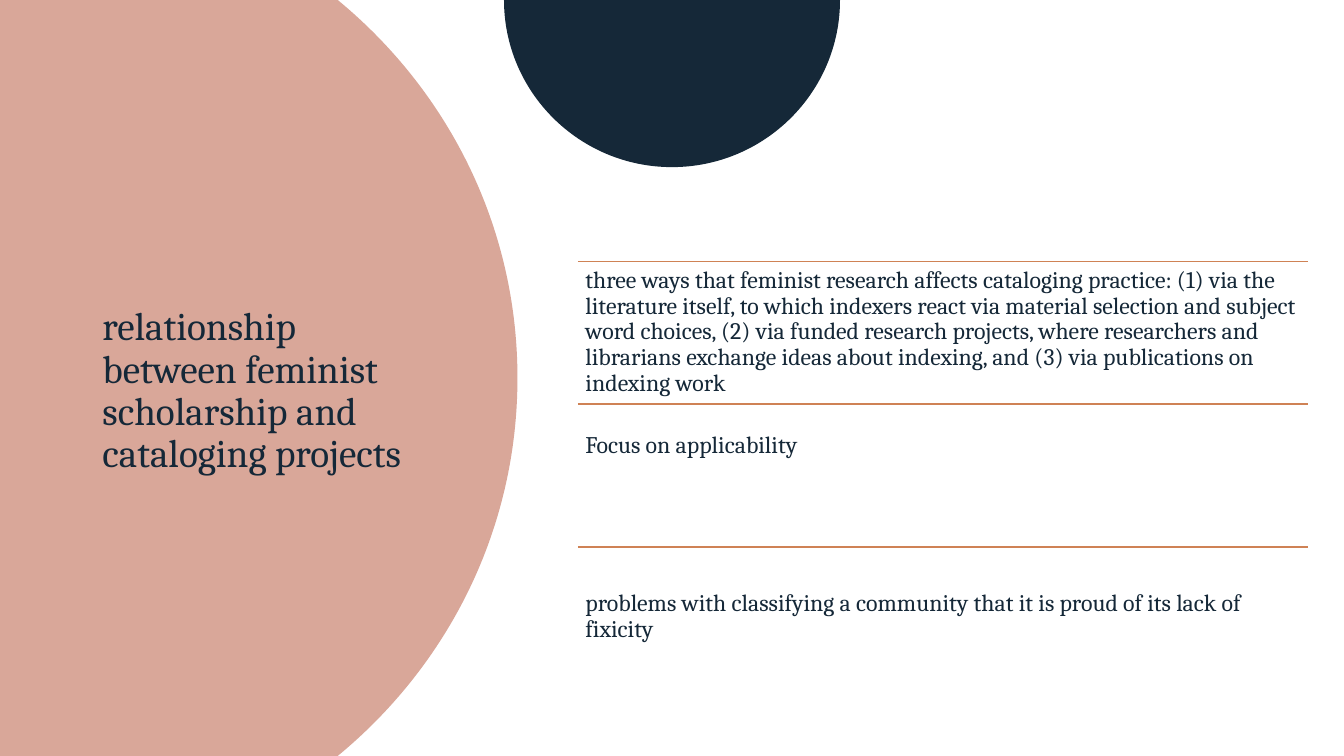
from dataclasses import dataclass

from lxml.etree import SubElement as sub
from pptx import Presentation
from pptx.dml.color import RGBColor as Color
from pptx.enum.shapes import MSO_CONNECTOR as Link
from pptx.enum.text import MSO_ANCHOR as Anchor, MSO_AUTO_SIZE as Fit, PP_ALIGN as Align
from pptx.oxml.ns import qn
from pptx.util import Pt

PX = 7620
WIDE, HIGH = 1600, 900
LEFT, TOP, SPAN, STEP = 688, 311, 869, 170

TITLE = "relationship between feminist scholarship and cataloging projects"
ROWS = [
    (0, 8, "three ways that feminist research affects cataloging practice: "
           "(1) via the literature itself, to which indexers react via material "
           "selection and subject word choices, (2) via funded research projects, "
           "where researchers and librarians exchange ideas about indexing, "
           "and (3) via publications on indexing work"),
    (26, 8, "Focus on applicability"),
    (0, 53, "problems with classifying a community that it is proud of its "
            "lack of fixicity"),
]
DISC = [(-2, 0), (402, 0),
        ((533, 108), (616, 269), (616, 450)),
        ((616, 631), (533, 792), (402, 900)),
        (-2, 900)]
BOWL = [(600, 0), (1000, 0),
        ((1000, 110), (910, 199), (800, 199)),
        ((690, 199), (600, 110), (600, 0))]


@dataclass(frozen=True)
class Theme:
    """Colours, font and type sizes of the slide."""
    rose: str = "D9A799"
    navy: str = "152838"
    rust: str = "CF8255"
    font: str = "Cambria"
    head: int = 28
    body: int = 17


LOOK = Theme()


def tint(name):
    """Turn a hex string into a colour."""
    return Color.from_string(name)


def place(shape, x, y, w, h):
    """Set the box of a shape in px."""
    shape.left, shape.top = x * PX, y * PX
    shape.width, shape.height = w * PX, h * PX


def write(shape, text, size=LOOK.body, color=LOOK.navy, anchor=Anchor.TOP,
          pad=(9, 8, 9, 8)):
    """Fill a shape with one formatted paragraph; pad is left, top, right, bottom."""
    frame = shape.text_frame
    frame.word_wrap = True
    frame.auto_size = Fit.NONE
    frame.vertical_anchor = anchor
    frame.margin_left, frame.margin_top, frame.margin_right, frame.margin_bottom = (
        side * PX for side in pad)
    para = frame.paragraphs[0]
    para.alignment = Align.LEFT
    para.line_spacing = 0.9
    para.space_before = Pt(0)
    run = para.add_run()
    run.text = text
    run.font.name = LOOK.font
    run.font.size = Pt(size)
    run.font.color.rgb = tint(color)


def add_curve(slide, steps, color):
    """Draw a filled outline; a step is a point, or two handles and a point."""
    bent = [isinstance(step[0], tuple) for step in steps]
    dots = [step[-1] if bend else step for step, bend in zip(steps, bent)]
    pen = slide.shapes.build_freeform(*dots[0], scale=PX)
    pen.add_line_segments(dots[1:], close=True)
    shape = pen.convert_to_shape()
    shape.shadow.inherit = False
    shape.fill.solid()
    shape.fill.fore_color.rgb = tint(color)
    shape.line.fill.background()
    x0, y0 = (min(axis) for axis in zip(*dots))
    parts = list(shape.element.iter(qn("a:lnTo")))
    for part, step, bend in zip(parts, steps[1:], bent[1:]):
        if bend:
            curve = part.makeelement(qn("a:cubicBezTo"), {})
            for x, y in step:
                sub(curve, qn("a:pt"), x=str(x - x0), y=str(y - y0))
            part.getparent().replace(part, curve)


def add_rule(slide, y):
    """Draw one thin line across the list."""
    rule = slide.shapes.add_connector(
        Link.STRAIGHT, LEFT * PX, y * PX, (LEFT + SPAN) * PX, y * PX)
    rule.line.color.rgb = tint(LOOK.rust)
    rule.line.width = Pt(1)
    sub(rule.element.spPr, qn("a:effectLst"))


def add_row(slide, y, drop, inset, text):
    """Add a rule and the text that hangs below it."""
    add_rule(slide, y)
    box = slide.shapes.add_textbox(0, 0, 0, 0)
    place(box, LEFT, y + drop, SPAN, STEP)
    write(box, text, pad=(9, inset, 9, 8))


def add_title(slide, text):
    """Format the title and bring it in front of the circles."""
    title = slide.shapes.title
    place(title, 110, 238, 398, 512)
    write(title, text, size=LOOK.head, anchor=Anchor.MIDDLE, pad=(12, 6, 12, 62))
    title.element.getparent().append(title.element)


def main():
    """Build the slide and save it."""
    deck = Presentation()
    deck.slide_width, deck.slide_height = WIDE * PX, HIGH * PX
    slide = deck.slides.add_slide(deck.slide_layouts[5])
    add_curve(slide, DISC, LOOK.rose)
    add_curve(slide, BOWL, LOOK.navy)
    add_title(slide, TITLE)
    for i, row in enumerate(ROWS):
        add_row(slide, TOP + i * STEP, *row)
    deck.save("out.pptx")


if __name__ == "__main__":
    main()
